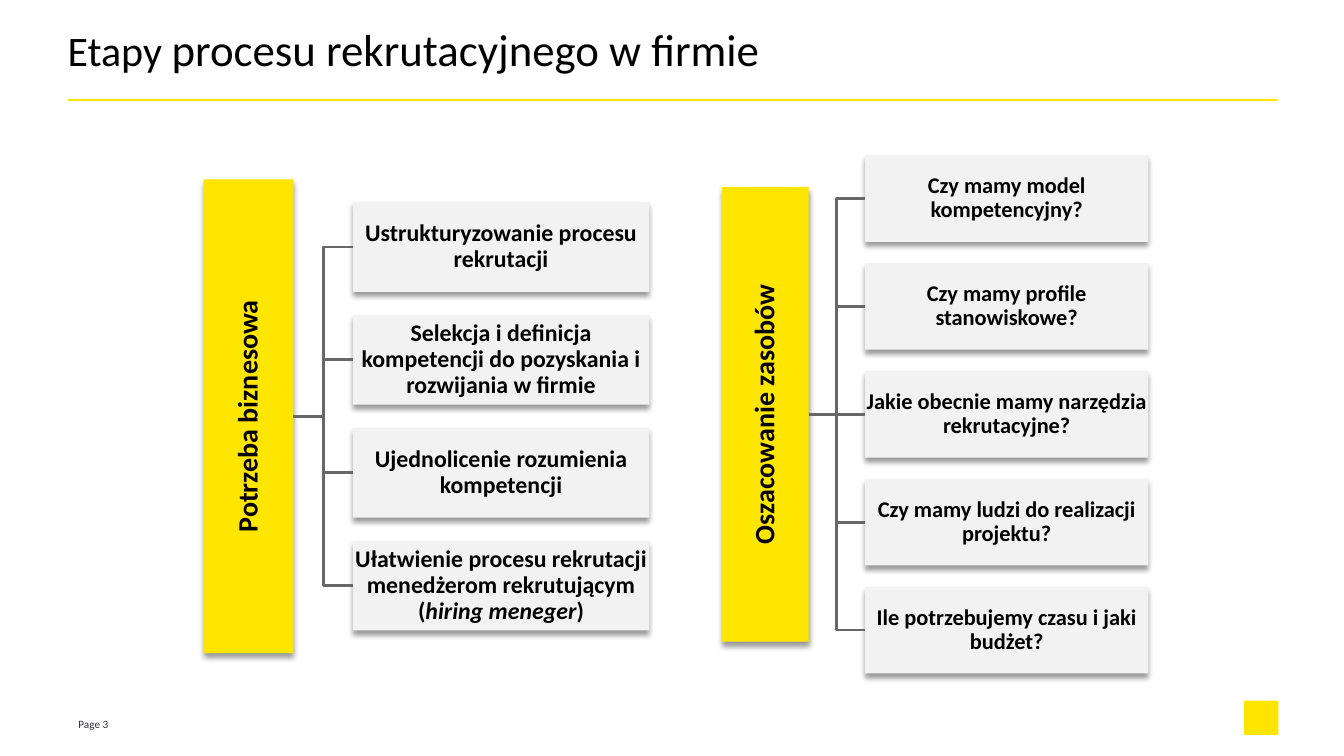
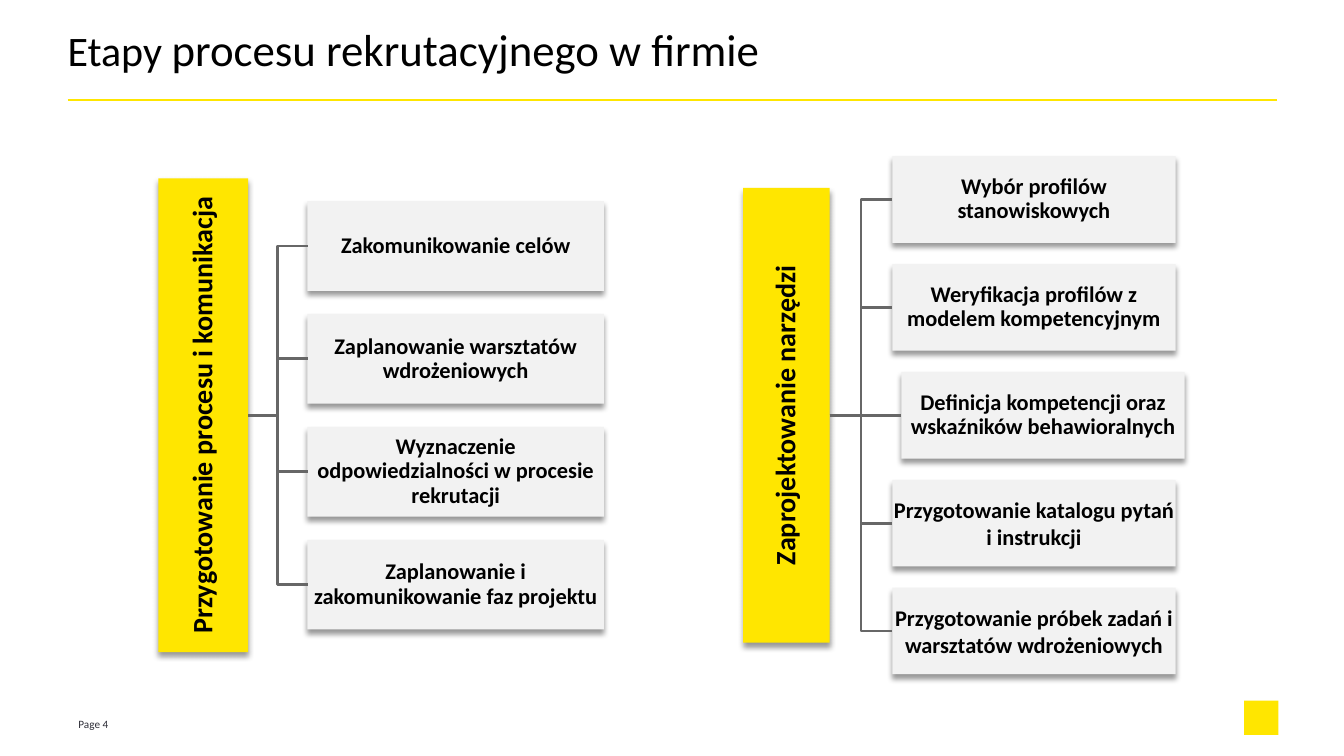
import dataclasses

import pptx
import pptx.dml.color
import pptx.enum.shapes
import pptx.enum.text
import pptx.oxml
import pptx.oxml.ns
import pptx.util
from pptx.util import Inches

COLORS = {
    "yellow": "FFE600",
    "grey": "F2F2F2",
    "line": "676767",
    "dark": "2E2E38",
    "black": "000000",
}
FONT = "Calibri"
ANCHOR = pptx.enum.text.MSO_ANCHOR
ALIGN = pptx.enum.text.PP_ALIGN
SHAPE = pptx.enum.shapes.MSO_SHAPE
CONNECTOR = pptx.enum.shapes.MSO_CONNECTOR
TITLE = ("Etapy ", "procesu rekrutacyjnego w firmie")
NO_EFFECTS = f'<a:effectLst {pptx.oxml.ns.nsdecls("a")}/>'
SHADOW = (
    f'<a:outerShdw {pptx.oxml.ns.nsdecls("a")} blurRad="50800" dist="38100"'
    ' dir="5400000" algn="ctr" rotWithShape="0">'
    f'<a:srgbClr val="{COLORS["black"]}"><a:alpha val="40000"/></a:srgbClr>'
    "</a:outerShdw>"
)


@dataclasses.dataclass
class Leaf:
    """One box of a tree; text between underscores is italic."""
    text: str
    shift: float = 0
    spacing: float = 0.9


@dataclasses.dataclass
class TreeSize:
    bar_height: float
    box_width: float
    box_height: float
    gap: float


FOUR = TreeSize(4.7, 2.94, 0.89, 0.23)
FIVE = TreeSize(4.51, 2.81, 0.86, 0.21)


class Deck:
    def __init__(self):
        self.prs = pptx.Presentation()
        self.prs.slide_width = Inches(13.33)
        self.prs.slide_height = Inches(7.5)
        self.slide = None

    def color(self, name):
        return pptx.dml.color.RGBColor.from_string(COLORS[name])

    def style(self, r, size, color="black", bold=False, italic=False):
        r.font.name = FONT
        r.font.size = pptx.util.Pt(size)
        r.font.bold = bold
        r.font.italic = italic
        r.font.color.rgb = self.color(color)

    def add_slide(self, page):
        """Start a slide with its title, rule, page number and corner mark."""
        self.slide = self.prs.slides.add_slide(self.prs.slide_layouts[5])
        self.title()
        self.rect(12.34, 6.95, 0.34, 0.34, "yellow")
        self.page_number(page)
        self.connector(CONNECTOR.STRAIGHT, "yellow", 1.5, (0.67, 0.99), (12.67, 0.99))

    def title(self):
        sp = self.slide.shapes.title
        sp.left, sp.top = Inches(0.67), Inches(0.3)
        sp.width, sp.height = Inches(12), Inches(0.94)
        tf = sp.text_frame
        self.frame(tf, ANCHOR.TOP, 0)
        p = tf.paragraphs[0]
        p.alignment = ALIGN.LEFT
        p.line_spacing = 0.85
        for text, size in zip(TITLE, (30, 32)):
            r = p.add_run()
            r.text = text
            self.style(r, size)

    def page_number(self, page):
        sp = self.slide.shapes.add_textbox(
            Inches(0.68), Inches(7.08), Inches(0.73), Inches(0.2))
        tf = sp.text_frame
        tf.text = f"Page {page}"
        tf.word_wrap = True
        tf.vertical_anchor = ANCHOR.MIDDLE
        self.style(tf.paragraphs[0].runs[0], 8, "dark")

    def frame(self, tf, anchor, inset):
        tf.word_wrap = True
        tf.auto_size = pptx.enum.text.MSO_AUTO_SIZE.NONE
        tf.vertical_anchor = anchor
        tf.margin_left = tf.margin_right = Inches(inset)
        tf.margin_top = tf.margin_bottom = Inches(inset)

    def rect(self, x, y, width, height, fill):
        sp = self.slide.shapes.add_shape(
            SHAPE.RECTANGLE, Inches(x), Inches(y), Inches(width), Inches(height))
        sp.shadow.inherit = False
        sp.fill.solid()
        sp.fill.fore_color.rgb = self.color(fill)
        sp.line.fill.background()
        return sp

    def box(self, x, y, width, height, fill, text, size, spacing=0.9):
        """Add a shadowed rectangle with centred bold text."""
        sp = self.rect(x, y, width, height, fill)
        effects = sp.element.spPr.find(pptx.oxml.ns.qn("a:effectLst"))
        effects.append(pptx.oxml.parse_xml(SHADOW))
        self.frame(sp.text_frame, ANCHOR.MIDDLE, 0.01)
        p = sp.text_frame.paragraphs[0]
        p.alignment = ALIGN.CENTER
        p.line_spacing = spacing
        for i, part in enumerate(text.split("_")):
            r = p.add_run()
            r.text = part
            self.style(r, size, bold=True, italic=i % 2 == 1)
        return sp

    def connector(self, kind, color, width, start, end):
        cxn = self.slide.shapes.add_connector(
            kind, *(Inches(v) for v in (*start, *end)))
        cxn.line.color.rgb = self.color(color)
        cxn.line.width = pptx.util.Pt(width)
        cxn._element.spPr.append(pptx.oxml.parse_xml(NO_EFFECTS))
        return cxn

    def tree(self, bar_x, box_x, middle, size, heading, leaves, font_size=16):
        """Add an upright heading bar joined to a column of boxes."""
        bar_width = size.box_height
        bar = self.box(bar_x, middle - size.bar_height / 2, bar_width,
                       size.bar_height, "yellow", heading, 20)
        bar.element.txBody.bodyPr.set("vert", "vert270")
        pitch = size.box_height + size.gap
        for i, leaf in enumerate(leaves):
            offset = (i - (len(leaves) - 1) / 2) * pitch
            x, y = box_x + leaf.shift, middle + offset
            box = self.box(x, y - size.box_height / 2, size.box_width,
                           size.box_height, "grey", leaf.text, font_size, leaf.spacing)
            kind = CONNECTOR.ELBOW if offset else CONNECTOR.STRAIGHT
            cxn = self.connector(kind, "line", 2, (bar_x + bar_width, middle), (x, y))
            cxn.begin_connect(bar, 3)
            cxn.end_connect(box, 1)


def main():
    deck = Deck()

    deck.add_slide(3)
    deck.tree(2.02, 3.5, 4.13, FOUR, "Potrzeba biznesowa", [
        Leaf("Ustrukturyzowanie procesu rekrutacji"),
        Leaf("Selekcja i definicja kompetencji do pozyskania i rozwijania w firmie"),
        Leaf("Ujednolicenie rozumienia kompetencji"),
        Leaf("Ułatwienie procesu rekrutacji menedżerom rekrutującym (_hiring meneger_)"),
    ], font_size=17)
    deck.tree(7.16, 8.58, 4.11, FIVE, "Oszacowanie zasobów", [
        Leaf("Czy mamy model kompetencyjny?"),
        Leaf("Czy mamy profile stanowiskowe?"),
        Leaf("Jakie obecnie mamy narzędzia rekrutacyjne?"),
        Leaf("Czy mamy ludzi do realizacji projektu?"),
        Leaf("Ile potrzebujemy czasu i jaki budżet?"),
    ])

    deck.add_slide(4)
    deck.tree(7.37, 8.85, 4.12, FIVE, "Zaprojektowanie narzędzi", [
        Leaf("Wybór profilów stanowiskowych"),
        Leaf("Weryfikacja profilów z modelem kompetencyjnym"),
        Leaf("Definicja kompetencji oraz wskaźników behawioralnych", shift=0.09),
        Leaf("Przygotowanie katalogu pytań i instrukcji", spacing=1.0),
        Leaf("Przygotowanie próbek zadań i warsztatów wdrożeniowych", spacing=1.0),
    ])
    deck.tree(1.57, 3.05, 4.12, FOUR, "Przygotowanie procesu i komunikacja", [
        Leaf("Zakomunikowanie celów"),
        Leaf("Zaplanowanie warsztatów wdrożeniowych"),
        Leaf("Wyznaczenie odpowiedzialności w procesie rekrutacji"),
        Leaf("Zaplanowanie i zakomunikowanie faz projektu"),
    ])

    deck.prs.save("out.pptx")


if __name__ == "__main__":
    main()
